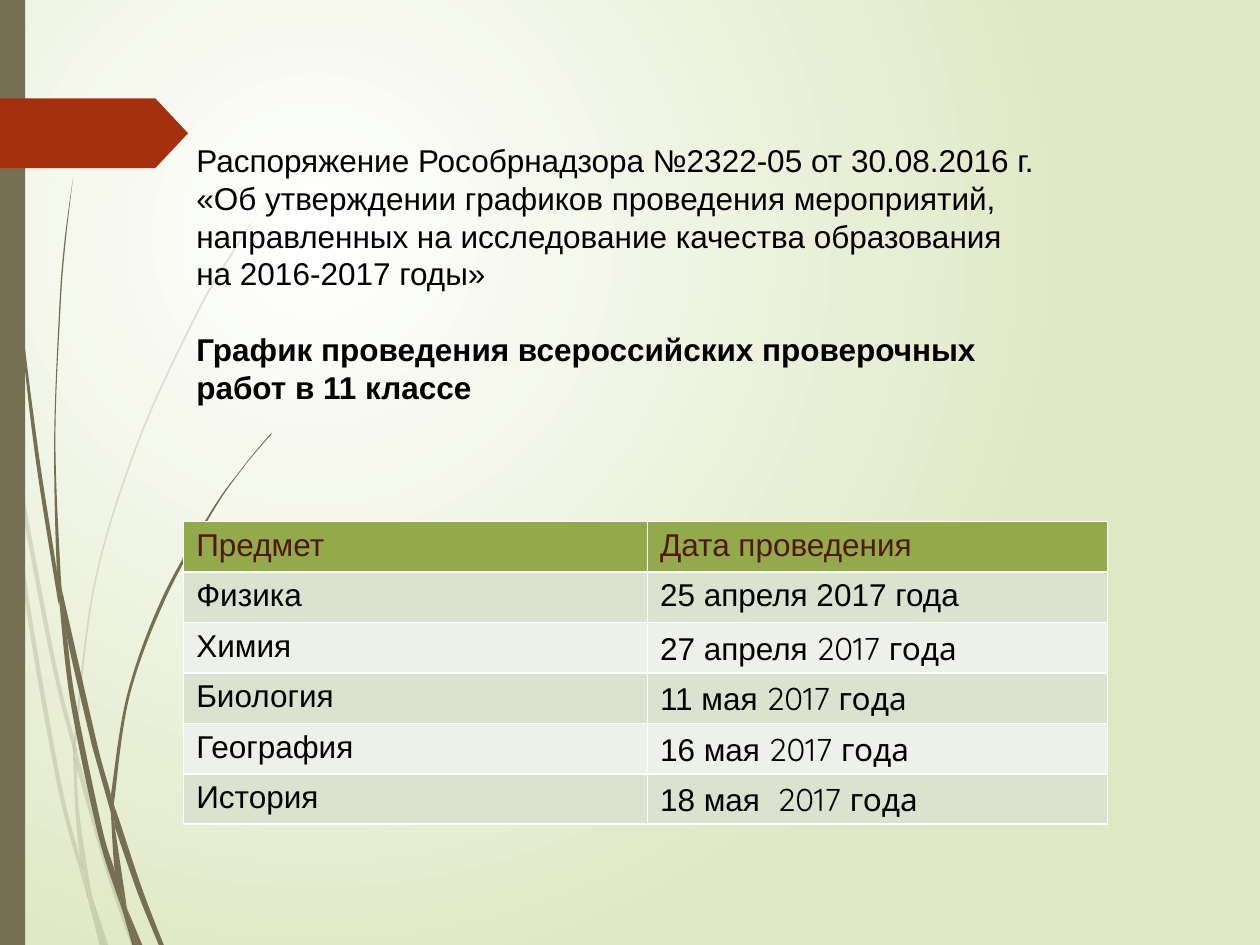
from pptx import Presentation, util as u
from pptx.dml.color import RGBColor
from pptx.enum import shapes, text
from pptx.oxml import ns
from lxml import etree

Pt = u.Pt
COLORS = {
    "white": "FFFFFF", "meadow": "DFE8C4", "grass": "766F54", "marker": "A53010",
    "ink": "000000", "header_text": "521808", "header": "92AA4C",
    "band_dark": "DCE2D0", "band_light": "EEF1E9",
}

# Each blade is two edges, one out and one back, in hundredths of an inch
FAINT_BLADES = [
    ([(0, 282), (6, 322), (8, 350)], [(7, 344), (0, 299)]),
    ([(10, 345), (43, 520), (59, 586)], [(59, 599), (40, 522), (12, 376)]),
    ([(61, 596), (64, 607), (88, 692), (108, 750)], [(104, 750), (85, 694), (61, 610)]),
    ([(73, 711), (86, 750)], [(83, 750), (73, 711)]),
    ([(8, 350), (12, 376), (22, 469), (48, 619), (64, 683), (69, 707), (70, 714)],
     [(64, 693), (45, 621), (19, 470), (8, 350)]),
    ([(58, 599), (61, 608), (61, 610), (63, 646), (72, 706), (73, 711)],
     [(67, 692), (64, 683), (60, 646), (58, 599)]),
    ([(61, 596), (61, 584), (76, 462), (111, 349), (159, 245), (187, 198), (201, 175), (217, 154)],
     [(217, 153), (201, 175), (186, 197), (158, 244), (110, 348), (75, 461), (59, 584), (59, 586)]),
    ([(70, 714), (82, 750)], [(79, 750), (70, 714)]),
    ([(59, 586), (61, 596), (61, 610)], [(61, 608), (58, 599), (59, 586)]),
    ([(65, 683), (67, 692), (73, 711), (83, 750)], [(82, 750), (70, 714), (69, 707), (65, 683)]),
]
SOLID_BLADES = [
    ([(3, 0), (4, 48), (6, 109), (15, 232), (30, 355), (45, 453), (47, 481)],
     [(46, 477), (27, 355), (14, 233), (5, 110), (3, 48), (2, 0)]),
    ([(50, 472), (77, 590), (88, 631), (88, 645)], [(73, 592), (53, 505), (50, 472)]),
    ([(91, 641), (94, 649), (113, 706), (130, 750)], [(126, 750), (109, 708), (91, 656)]),
    ([(47, 477), (53, 505), (60, 556), (81, 657), (91, 691), (96, 717), (97, 722)],
     [(92, 708), (77, 659), (56, 557), (47, 477)]),
    ([(58, 141), (52, 193), (48, 245), (44, 349), (48, 453), (50, 472)],
     [(49, 472), (45, 449), (43, 349), (47, 245), (51, 193), (58, 141)]),
    ([(100, 719), (113, 750)], [(110, 750), (100, 719)]),
    ([(45, 449), (49, 472), (50, 472), (53, 505)], [(47, 477), (45, 453), (45, 449)]),
    ([(91, 641), (91, 633), (103, 552), (131, 476), (169, 406), (191, 374), (203, 359), (216, 344)],
     [(215, 344), (203, 358), (191, 373), (168, 405), (129, 474), (101, 551), (88, 631)]),
    ([(97, 722), (108, 750)], [(105, 750), (97, 722)]),
    ([(88, 645), (90, 651), (91, 656), (100, 716), (100, 719)], [(96, 706), (91, 691), (88, 645)]),
    ([(88, 631), (91, 641), (91, 656)], [(90, 651), (88, 645), (88, 631)]),
    ([(91, 691), (96, 706), (100, 719), (110, 750)], [(108, 750), (97, 722), (96, 717), (91, 691)]),
]
SCHEDULE = [
    ("Предмет", "Дата проведения", ""),
    ("Физика", "25 апреля 2017 года", ""),
    ("Химия", "27 апреля ", "2017 года"),
    ("Биология", "11 мая ", "2017 года"),
    ("География", "16 мая ", "2017 года"),
    ("История", "18 мая  ", "2017 года"),
]


def color(name):
    return RGBColor.from_string(COLORS[name])


def paint(shape, name):
    shape.shadow.inherit = False
    shape.fill.solid()
    shape.fill.fore_color.rgb = color(name)
    shape.line.fill.background()


def bend_edges(blade, edges):
    """Turn the straight segments within each edge into Bezier curves."""
    lines = list(blade.element.iter(ns.qn("a:lnTo")))
    xs, ys = zip(*(point for edge in edges for point in edge))
    position = 0
    for edge in edges:
        padded = [edge[0], *edge, edge[-1]]
        for a, b, c, d in zip(padded, padded[1:], padded[2:], padded[3:]):
            controls = (
                [q + (r - p) / 6 for p, q, r in zip(a, b, c)],
                [r - (s - q) / 6 for q, r, s in zip(b, c, d)],
                c)
            curve = etree.Element(ns.qn("a:cubicBezTo"))
            for x, y in controls:
                etree.SubElement(curve, ns.qn("a:pt"), x=str(round(x - min(xs))), y=str(round(y - min(ys))))
            lines[position].getparent().replace(lines[position], curve)
            position += 1
        # Step over the straight join to the next edge
        position += 1


def add_background(slide):
    fill = slide.background.fill
    fill.gradient()
    for stop, name in zip(fill.gradient_stops, ("white", "meadow")):
        stop.color.rgb = color(name)
    gradient = slide.element.find(".//" + ns.qn("a:gradFill"))
    linear = gradient.find(ns.qn("a:lin"))
    circle = etree.Element(ns.qn("a:path"), path="circle")
    etree.SubElement(circle, ns.qn("a:fillToRect"), l="50000", t="50000", r="100000", b="100000")
    gradient.replace(linear, circle)


def add_grass(slide, left, top, blades, opacity=100):
    group = slide.shapes.add_group_shape()
    for blade_edges in blades:
        edges = [[(10 * x, 10 * y) for x, y in edge] for edge in blade_edges]
        points = edges[0] + edges[1]
        builder = group.shapes.build_freeform(*points[0], scale=Pt(0.72) / 10)
        builder.add_line_segments(points[1:], close=True)
        blade = builder.convert_to_shape(Pt(left), Pt(top))
        bend_edges(blade, edges)
        paint(blade, "grass")
        if opacity < 100:
            fill_color = blade.element.spPr.find(ns.qn("a:solidFill"))[0]
            etree.SubElement(fill_color, ns.qn("a:alpha"), val=str(opacity * 1000))


def add_sidebar(slide, left, top, width, height):
    bar = slide.shapes.add_shape(shapes.MSO_SHAPE.RECTANGLE, Pt(left), Pt(top), Pt(width), Pt(height))
    paint(bar, "grass")


def add_marker(slide, left, top, width, height):
    marker = slide.shapes.add_shape(shapes.MSO_SHAPE.PENTAGON, Pt(left), Pt(top), Pt(width), Pt(height))
    marker.adjustments[0] = 0.47
    paint(marker, "marker")


def add_title(slide, left, top, width, height):
    title = slide.shapes.title
    title.left, title.top, title.width, title.height = Pt(left), Pt(top), Pt(width), Pt(height)
    frame = title.text_frame
    frame.text = (
        "Распоряжение Рособрнадзора №2322-05 от 30.08.2016 г.\n"
        "«Об утверждении графиков проведения мероприятий, направленных на исследование "
        "качества образования на 2016-2017 годы»\n"
        "График проведения всероссийских проверочных работ в 11 классе")
    frame.word_wrap = True
    frame.auto_size = text.MSO_AUTO_SIZE.SHAPE_TO_FIT_TEXT
    frame.vertical_anchor = text.MSO_ANCHOR.TOP
    for paragraph in frame.paragraphs:
        paragraph.alignment = text.PP_ALIGN.LEFT
        paragraph.font.size = Pt(18)
        paragraph.font.name = "Arial"
        paragraph.font.color.rgb = color("ink")
    heading = frame.paragraphs[-1]
    heading.font.bold = True
    heading.space_before = Pt(21.6)
    # Bring the text in front of the grass
    title.element.getparent().append(title.element)


def set_borders(cell):
    properties = cell._tc.get_or_add_tcPr()
    for side in "LRTB":
        line = etree.SubElement(properties, ns.qn("a:ln" + side), w=str(Pt(1)))
        fill = etree.SubElement(line, ns.qn("a:solidFill"))
        etree.SubElement(fill, ns.qn("a:srgbClr"), val=COLORS["white"])


def add_schedule(slide, left, top, width, height):
    frame = slide.shapes.add_table(len(SCHEDULE), 2, Pt(left), Pt(top), Pt(width), Pt(height))
    table = frame.table
    table.columns[0].width = Pt(265)
    table.columns[1].width = Pt(width - 265)
    for index, (subject, date, year) in enumerate(SCHEDULE):
        header = index == 0
        band = "header" if header else "band_dark" if index % 2 else "band_light"
        for cell, runs in zip(table.rows[index].cells, ([subject], [date, year])):
            set_borders(cell)
            cell.fill.solid()
            cell.fill.fore_color.rgb = color(band)
            paragraph = cell.text_frame.paragraphs[0]
            for words, font_name in zip(runs, ("Arial", "Quicksand")):
                if words:
                    run = paragraph.add_run()
                    run.text = words
                    run.font.name = font_name
                    run.font.size = Pt(18)
                    run.font.bold = False
                    run.font.color.rgb = color("header_text" if header else "ink")


def main():
    presentation = Presentation()
    presentation.slide_width, presentation.slide_height = Pt(720), Pt(540)
    slide = presentation.slides.add_slide(presentation.slide_layouts[5])
    # Backdrop
    add_background(slide)
    add_grass(slide, 0, 0, FAINT_BLADES, opacity=20)
    add_grass(slide, 0, 0, SOLID_BLADES)
    add_sidebar(slide, 0, 0, 14.4, 540)
    add_marker(slide, 0, 56.2, 107.5, 39.9)
    # Content
    add_title(slide, 105, 77, 499, 160)
    add_schedule(slide, 105, 298, 528, 172.8)
    presentation.save("out.pptx")


if __name__ == "__main__":
    main()
